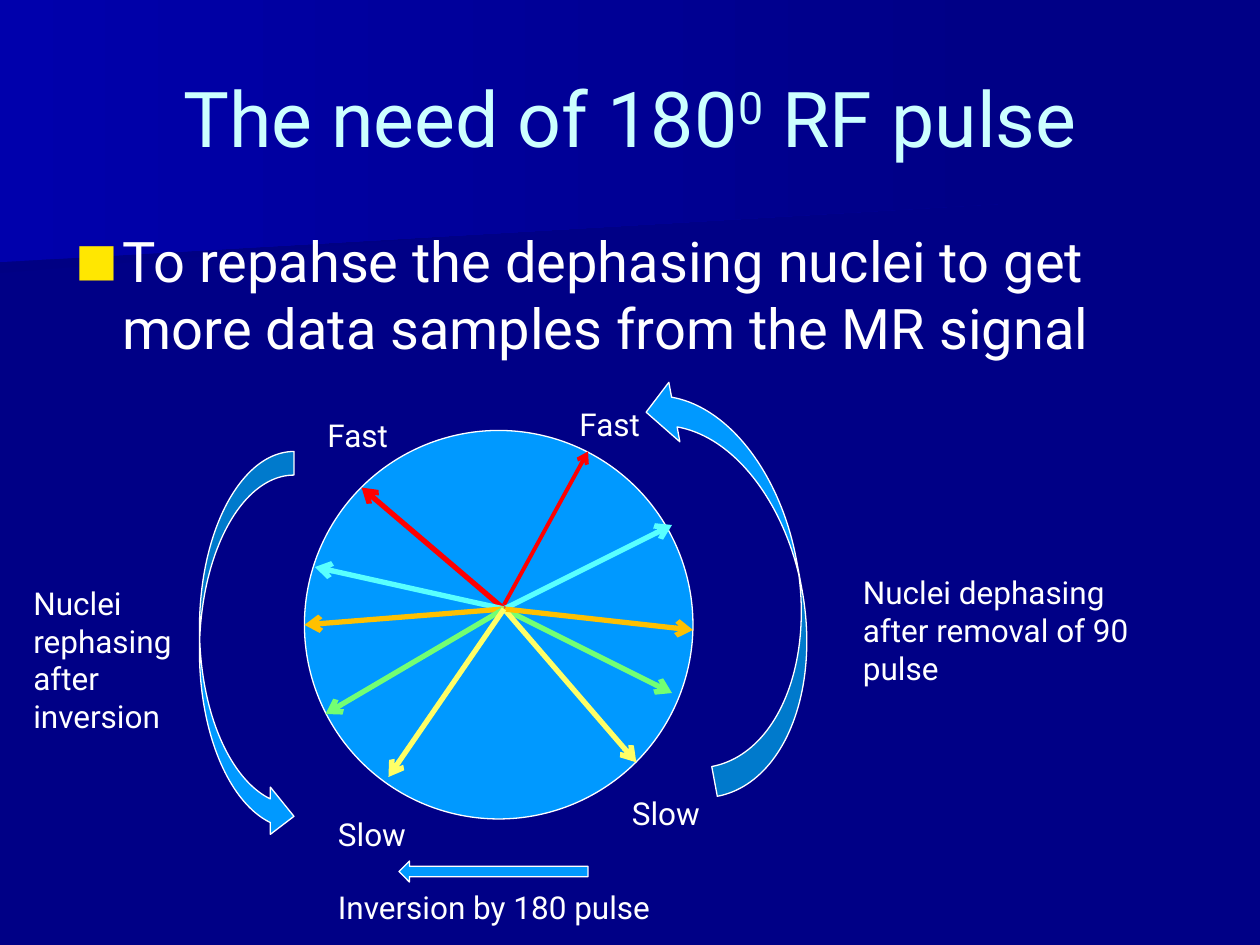
from lxml import etree
from pptx import Presentation
from pptx.dml.color import RGBColor
from pptx.enum.shapes import MSO_CONNECTOR, MSO_SHAPE
from pptx.enum.text import MSO_ANCHOR, PP_ALIGN
from pptx.oxml.ns import qn
from pptx.util import Pt

FONT = "Roboto"
COLORS = {
    "navy": "000086", "deep": "000083", "glow": "0000AC",
    "title": "CCFFFF", "white": "FFFFFF", "bullet": "FFE701", "blue": "0099FF",
    "red": "FF0000", "cyan": "59FFFF", "orange": "FFC000",
    "green": "73FF73", "yellow": "FFFF66",
}

TITLE = [("The need of 180", 0), ("0", 30000), (" RF pulse", 0)]
TITLE_BOX = (36, 21.6, 648, 90)
BODY = "To repahse the dephasing nuclei to get more data samples from the MR signal"
BODY_BOX = (36, 126, 648, 96)

# start colour, outline
BACKDROP = [
    ("deep", [(560.2, 110.2), (0, 156), (0, 72.7), (560.9, 72.7), (560.2, 92.2)]),
    ("glow", [(570.2, 116.6), (0, 149.8), (0, 0), (570.2, 0)]),
]

DISC = (174, 246, 222, 222)
HUB = (288, 348)
# colour, tip, width, start
VECTORS = [
    ("green", (384, 396), 3, HUB),
    ("yellow", (363.6, 435.6), 3, HUB),
    ("red", (336, 258), 2.25, (288, 345.6)),
    ("cyan", (384, 300), 3, HUB),
    ("orange", (396, 360), 3, HUB),
    ("red", (206.6, 278.6), 3, HUB),
    ("cyan", (180, 324), 3, HUB),
    ("orange", (174, 357.1), 3, HUB),
    ("green", (186, 408), 3, HUB),
    ("yellow", (222, 444), 3, HUB),
]
# shape, box, rotation, adjustments, flipped
BLOCK_ARROWS = [
    (MSO_SHAPE.CURVED_UP_ARROW, (301.7, 295.9, 240.5, 69.1), 259.5, (0.25, 0.5, 0.23), False),
    (MSO_SHAPE.CURVED_LEFT_ARROW, (114, 258, 54, 222), 0, (), True),
    (MSO_SHAPE.LEFT_ARROW, (228, 492, 108, 12), 0, (), False),
]
LABELS = [
    ("Fast", (324, 228, 54, 29)),
    ("Fast", (180, 234, 54, 29)),
    ("Slow", (354, 450, 54, 30)),
    ("Slow", (186, 462, 54, 30)),
    ("Nuclei dephasing after removal of 90 pulse", (486, 324, 180, 72.7)),
    ("Inversion by 180 pulse", (186, 504, 252, 29)),
    ("Nuclei rephasing after inversion", (12, 330, 108, 94.3)),
]


def rgb(color):
    return RGBColor.from_string(COLORS[color])


def points(values):
    return [Pt(value) for value in values]


def add_run(paragraph, text, size, color):
    run = paragraph.add_run()
    run.text = text
    for name, value in {"name": FONT, "size": Pt(size)}.items():
        setattr(run.font, name, value)
    run.font.color.rgb = rgb(color)
    return run


def add_text(slide, text, box, size):
    frame = slide.shapes.add_textbox(*points(box)).text_frame
    frame.word_wrap = True
    paragraph = frame.paragraphs[0]
    add_run(paragraph, text, size, "white")
    return paragraph


def add_bullet(paragraph):
    properties = paragraph._p.get_or_add_pPr()
    properties.set("marL", str(Pt(27)))
    properties.set("indent", str(-Pt(27)))
    color = etree.SubElement(properties, qn("a:buClr"))
    etree.SubElement(color, qn("a:srgbClr"), val=COLORS["bullet"])
    etree.SubElement(properties, qn("a:buSzPct"), val="80000")
    etree.SubElement(properties, qn("a:buFont"), typeface=FONT)
    etree.SubElement(properties, qn("a:buChar"), char="■")


def add_backdrop(slide, start_color, outline):
    first, *rest = [points(point) for point in outline]
    builder = slide.shapes.build_freeform(*first)
    builder.add_line_segments(rest, close=True)
    band = builder.convert_to_shape()
    band.shadow.inherit = False
    band.line.fill.background()
    band.fill.gradient()
    band.fill.gradient_angle = 0
    for stop, color in zip(band.fill.gradient_stops, (start_color, "navy")):
        stop.color.rgb = rgb(color)


def add_blue_shape(slide, kind, box):
    shape = slide.shapes.add_shape(kind, *points(box))
    shape.shadow.inherit = False
    shape.fill.solid()
    shape.fill.fore_color.rgb = rgb("blue")
    shape.line.color.rgb = rgb("white")
    shape.line.width = Pt(0.75)
    return shape


def add_vector(slide, color, tip, width, start):
    vector = slide.shapes.add_connector(MSO_CONNECTOR.STRAIGHT, *points(start + tip))
    vector.line.color.rgb = rgb(color)
    vector.line.width = Pt(width)
    etree.SubElement(vector.line._get_or_add_ln(), qn("a:tailEnd"), type="arrow")
    etree.SubElement(vector._element.spPr, qn("a:effectLst"))


def place_title(slide):
    title = slide.shapes.title
    slide.shapes._spTree.append(title._element)  # in front of the backdrop
    for name, value in zip(("left", "top", "width", "height"), points(TITLE_BOX)):
        setattr(title, name, value)
    title.text_frame.vertical_anchor = MSO_ANCHOR.MIDDLE
    paragraph = title.text_frame.paragraphs[0]
    paragraph.alignment = PP_ALIGN.CENTER
    for text, baseline in TITLE:
        run = add_run(paragraph, text, 44, "title")
        if baseline:
            run.font._element.set("baseline", str(baseline))


def main():
    deck = Presentation()
    deck.slide_width, deck.slide_height = Pt(720), Pt(540)
    slide = deck.slides.add_slide(deck.slide_layouts[5])
    slide.background.fill.solid()
    slide.background.fill.fore_color.rgb = rgb("navy")

    for band in BACKDROP:
        add_backdrop(slide, *band)
    place_title(slide)
    body = add_text(slide, BODY, BODY_BOX, 32)
    body.space_before = Pt(6.4)
    add_bullet(body)

    add_blue_shape(slide, MSO_SHAPE.OVAL, DISC)
    for vector in VECTORS:
        add_vector(slide, *vector)
    for kind, box, rotation, adjustments, flipped in BLOCK_ARROWS:
        arrow = add_blue_shape(slide, kind, box)
        arrow.rotation = rotation
        for index, value in enumerate(adjustments):
            arrow.adjustments[index] = value
        if flipped:
            arrow._element.spPr.xfrm.set("flipH", "1")
    for text, box in LABELS:
        add_text(slide, text, box, 18)

    deck.save("out.pptx")


if __name__ == "__main__":
    main()
